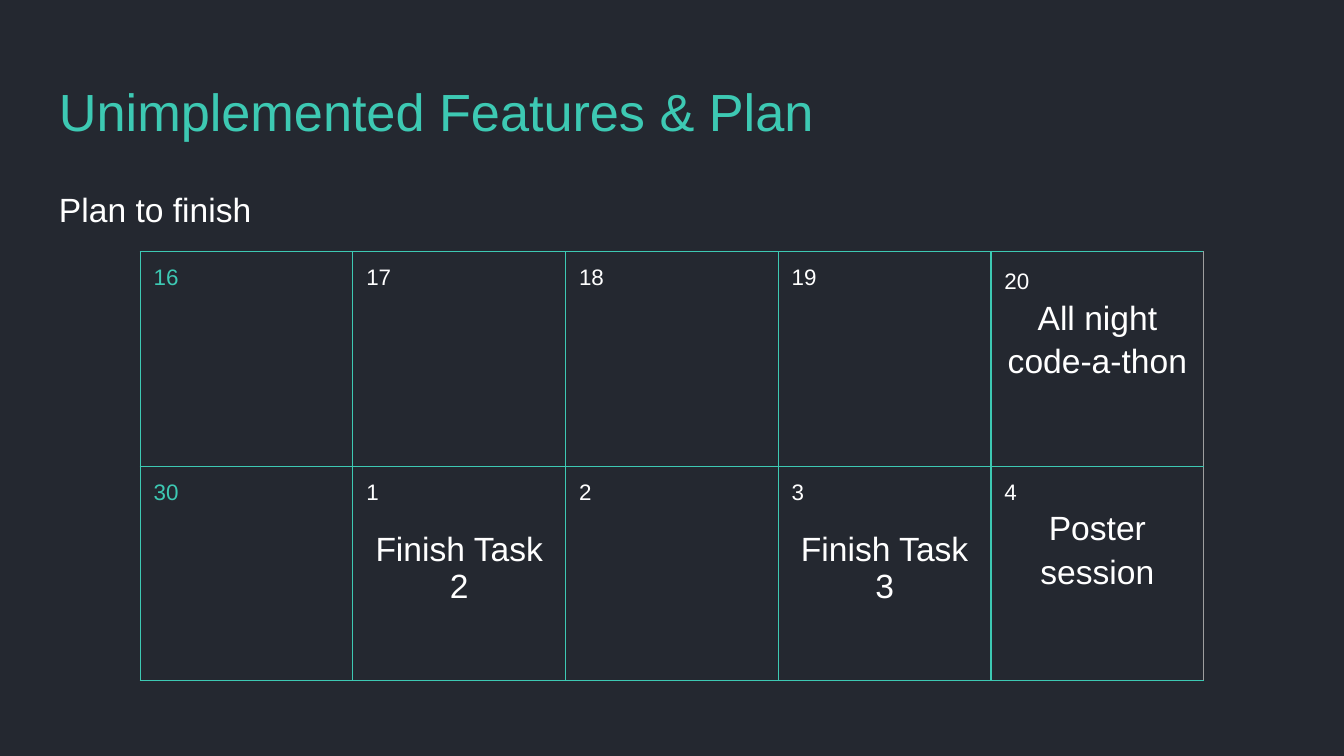
import pptx
import pptx.dml.color
import pptx.enum.text
import pptx.oxml
import pptx.oxml.ns
import pptx.util

HUES = {"back": "242830", "teal": "3DC9B3", "white": "FFFFFF", "gray": "9E9E9E"}
DAYS = [
    [{"day": "16"}, {"day": "17"}, {"day": "18"}, {"day": "19"},
     {"day": "20", "top": 1.15, "task": "All night code-a-thon", "lead": 1.15}],
    [{"day": "30"}, {"day": "1", "task": "Finish Task 2", "gap": 13.8}, {"day": "2"},
     {"day": "3", "task": "Finish Task 3", "gap": 13.8},
     {"day": "4", "task": "Poster session", "lead": 1.15}],
]


def tint(name):
    return pptx.dml.color.RGBColor.from_string(HUES[name])


def write(para, text, size=18, hue="white", mid=False, lead=None, gap=0):
    align = pptx.enum.text.PP_ALIGN
    para.alignment = align.CENTER if mid else align.LEFT
    if lead:
        para.line_spacing = lead
    if gap:
        para.space_before = pptx.util.Pt(gap)
    run = para.add_run()
    run.text = text
    run.font.name = "Arial"
    run.font.size = pptx.util.Pt(size)
    run.font.color.rgb = tint(hue)


class Deck:
    """Holds the style and the current slide, placing parts by percent of its size."""

    def __init__(self, wide, high):
        self.show = pptx.Presentation()
        self.show.slide_width = pptx.util.Inches(wide)
        self.show.slide_height = pptx.util.Inches(high)
        self.pad = pptx.util.Inches(0.1)
        self.slide = self.show.slides.add_slide(self.show.slide_layouts[6])
        fill = self.slide.background.fill
        fill.solid()
        fill.fore_color.rgb = tint("back")

    def place(self, x, y, w, h):
        wide, high = self.show.slide_width / 100, self.show.slide_height / 100
        return [round(part) for part in (x * wide, y * high, w * wide, h * high)]

    def inset(self, item):
        item.margin_left = item.margin_right = self.pad
        item.margin_top = item.margin_bottom = self.pad

    def text(self, spot, words, **form):
        frame = self.slide.shapes.add_textbox(*self.place(*spot)).text_frame
        frame.word_wrap = True
        self.inset(frame)
        write(frame.paragraphs[0], words, **form)

    def edge(self, cell, side, hue):
        space = pptx.oxml.ns.nsdecls("a")
        line = pptx.oxml.parse_xml(
            f'<a:ln{side} {space} w="{pptx.util.Pt(0.75)}"><a:solidFill>'
            f'<a:srgbClr val="{HUES[hue]}"/></a:solidFill></a:ln{side}>')
        cell._tc.get_or_add_tcPr().append(line)

    def cell(self, cell, first, last, day, top=None, task="", **form):
        self.inset(cell)
        for side in "LRTB":
            self.edge(cell, side, "gray" if last and side == "R" else "teal")
        cell.fill.background()
        frame = cell.text_frame
        write(frame.paragraphs[0], day, size=12, hue="teal" if first else "white", lead=top)
        if task:
            write(frame.add_paragraph(), task, mid=True, **form)

    def table(self, spot, rows):
        count = len(rows[0])
        grid = self.slide.shapes.add_table(len(rows), count, *self.place(*spot)).table
        grid.first_row = grid.horz_banding = False
        for r, row in enumerate(rows):
            for c, data in enumerate(row):
                self.cell(grid.cell(r, c), c == 0, c == count - 1, **data)

    def save(self):
        self.show.save("out.pptx")


def main():
    deck = Deck(10, 10 * 9 / 16)
    deck.text((3.41, 8.65, 93.18, 11.13), "Unimplemented Features & Plan", size=28, hue="teal")
    deck.text((3.41, 22.4, 93.18, 66.42), "Plan to finish", lead=1.15)
    deck.table((10.43, 33.3, 79.15, 56.75), DAYS)
    deck.save()


if __name__ == "__main__":
    main()
